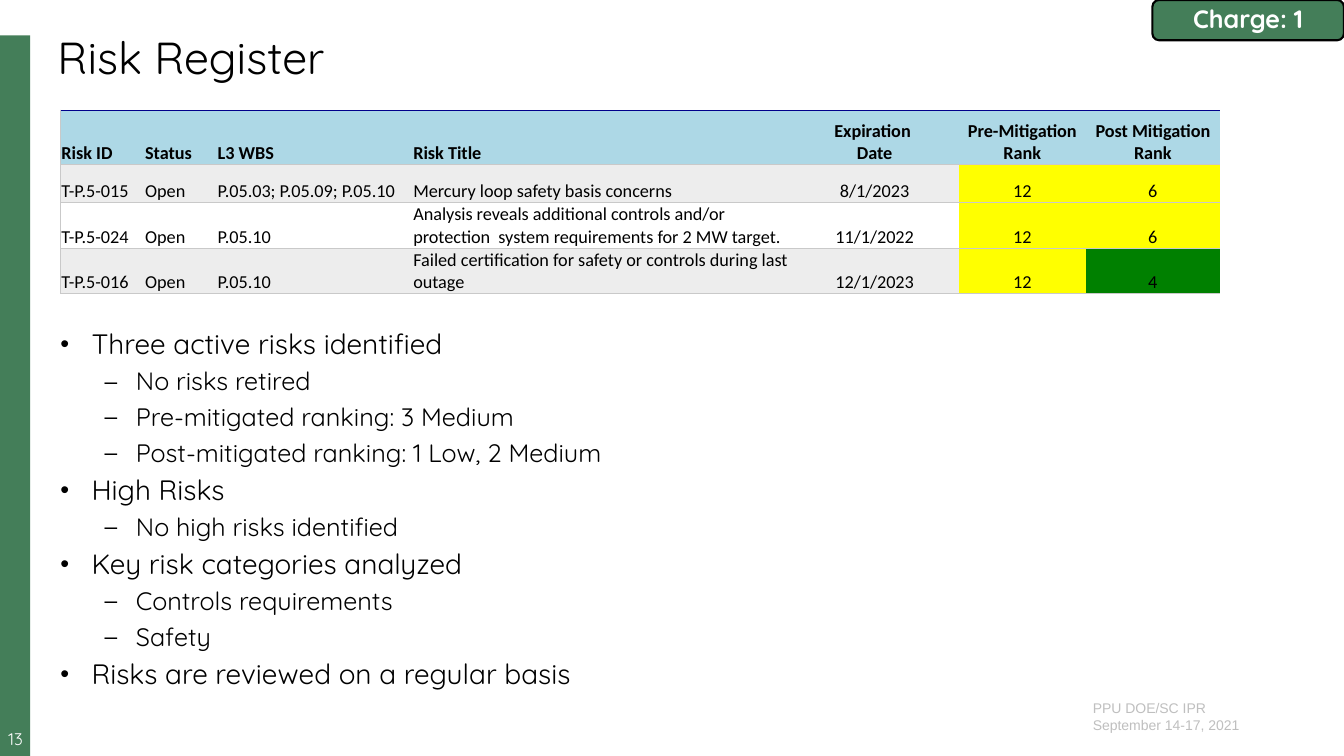
from lxml import etree
from pptx import Presentation
from pptx.dml.color import RGBColor
from pptx.enum.shapes import MSO_SHAPE
from pptx.enum.text import MSO_ANCHOR, PP_ALIGN
from pptx.oxml.ns import qn
from pptx.util import Inches, Pt

LEFT, CENTER = PP_ALIGN.LEFT, PP_ALIGN.CENTER
TOP, MIDDLE, BOTTOM = MSO_ANCHOR.TOP, MSO_ANCHOR.MIDDLE, MSO_ANCHOR.BOTTOM
RECT, ROUND = MSO_SHAPE.RECTANGLE, MSO_SHAPE.ROUNDED_RECTANGLE


def color(code):
    return RGBColor.from_string(code)


def add(parent, tag, **attrs):
    return etree.SubElement(parent, qn(tag), **attrs)


class Deck:
    font, table_font = "Quicksand", "Calibri"
    green, black, white = "447E59", "000000", "FFFFFF"
    gray, rule, navy = "BFBFBF", "C9C9C9", "00008B"
    head, band = "ADD8E6", "EDEDED"

    def __init__(self):
        self.prs = Presentation()
        self.prs.slide_width = Inches(13.33)
        self.prs.slide_height = Inches(7.5)
        self.slide = self.prs.slides.add_slide(self.prs.slide_layouts[5])

    def frame(self, tf, anchor=TOP, inset=(0.1, 0.05, 0.1, 0.05)):
        tf.word_wrap = True
        tf.vertical_anchor = anchor
        tf.margin_left, tf.margin_top, tf.margin_right, tf.margin_bottom = (
            Inches(n) for n in inset)

    def style(self, para, size, ink, align=LEFT, font=None, bold=False, gap=0.9):
        para.alignment = align
        para.line_spacing = gap
        for run in para.runs:
            run.font.name = font or self.font
            run.font.size = Pt(size)
            run.font.bold = bold
            run.font.color.rgb = color(ink)

    def place(self, shape, box):
        shape.left, shape.top, shape.width, shape.height = (Inches(n) for n in box)

    def title(self, text, box):
        shape = self.slide.shapes.title
        self.place(shape, box)
        shape.text_frame.text = text
        self.frame(shape.text_frame)
        self.style(shape.text_frame.paragraphs[0], 32, self.black)

    def shape(self, kind, box, edge=None):
        shape = self.slide.shapes.add_shape(kind, *(Inches(n) for n in box))
        shape.shadow.inherit = False
        shape.fill.solid()
        shape.fill.fore_color.rgb = color(self.green)
        if edge:
            shape.line.color.rgb = color(edge)
            shape.line.width = Pt(1.5)
        else:
            shape.line.fill.background()
        return shape

    def badge(self, text, box):
        tf = self.shape(ROUND, box, self.black).text_frame
        tf.text = text
        self.frame(tf, MIDDLE, (0.05,) * 4)
        self.style(tf.paragraphs[0], 18, self.white, CENTER, bold=True)

    def text(self, text, box, size, ink, inset=(0.1, 0.05, 0.1, 0.05), **look):
        tf = self.slide.shapes.add_textbox(*(Inches(n) for n in box)).text_frame
        tf.text = text
        self.frame(tf, TOP, inset)
        for para in tf.paragraphs:
            self.style(para, size, ink, **look)
        return tf

    def bullets(self, items, box):
        tf = self.text("\n".join(text for _, text in items), box, 20, self.black)
        for i, (para, (level, _)) in enumerate(zip(tf.paragraphs, items)):
            para.level = level
            para.space_before = Pt(6 if i else 0)
            props = para._p.get_or_add_pPr()
            props.set("marL", str(Inches((0.31, 0.75)[level])))
            props.set("indent", str(Inches(-0.31)))
            add(add(props, "a:buClr"), "a:srgbClr", val=self.black)
            add(props, "a:buSzPct", val="90000")
            add(props, "a:buFont", typeface="Arial")
            add(props, "a:buChar", char="•–"[level])
            para.font.size = Pt((20, 18)[level])
            for run in para.runs:
                run.font.size = para.font.size

    def border(self, cell, side, ink):
        line = add(cell._tc.get_or_add_tcPr(), "a:ln" + side, w=str(Pt(0.5)))
        if ink:
            add(add(line, "a:solidFill"), "a:srgbClr", val=ink)
        else:
            add(line, "a:noFill")

    def cell(self, cell, text, fill, edges, align, bold):
        for side, ink in zip("LRTB", edges):
            self.border(cell, side, ink)
        if fill:
            cell.fill.solid()
            cell.fill.fore_color.rgb = color(fill)
        else:
            cell.fill.background()
        para = cell.text_frame.paragraphs[0]
        para.text = text
        cell.vertical_anchor = BOTTOM
        cell.margin_left = cell.margin_right = cell.margin_top = Inches(0.01)
        cell.margin_bottom = 0
        self.style(para, 13, self.black, align, self.table_font, bold, 1.0)

    def table(self, rows, ranks, spot, widths, heights):
        box = (*spot, sum(widths), sum(heights))
        grid = self.slide.shapes.add_table(
            len(rows), len(widths), *(Inches(n) for n in box)).table
        grid.horz_banding = False
        for col, width in zip(grid.columns, widths):
            col.width = Inches(width)
        for row, height in zip(grid.rows, heights):
            row.height = Inches(height)
        for r, row in enumerate(rows):
            base = self.band if r % 2 else None
            for c, text in enumerate(row):
                fill = self.head if r == 0 else ranks[text] if c > 4 else base
                edges = (None if c else self.rule, None,
                         self.rule if r else self.navy, self.rule)
                align = CENTER if c > 3 else LEFT
                self.cell(grid.cell(r, c), text, fill, edges, align, r == 0)


RISKS = [
    ("Risk ID", "Status", "L3 WBS", "Risk Title", "Expiration \vDate",
     "Pre-Mitigation Rank", "Post Mitigation Rank"),
    ("T-P.5-015", "Open", "P.05.03; P.05.09; P.05.10",
     "Mercury loop safety basis concerns", "8/1/2023", "12", "6"),
    ("T-P.5-024", "Open", "P.05.10",
     "Analysis reveals additional controls and/or protection  system "
     "requirements for 2 MW target.", "11/1/2022", "12", "6"),
    ("T-P.5-016", "Open", "P.05.10",
     "Failed certification for safety or controls during last outage",
     "12/1/2023", "12", "4"),
]
RANKS = {"12": "FFFF00", "6": "FFFF00", "4": "008000"}
POINTS = [
    (0, "Three active risks identified"),
    (1, "No risks retired"),
    (1, "Pre-mitigated ranking: 3 Medium"),
    (1, "Post-mitigated ranking: 1 Low, 2 Medium"),
    (0, "High Risks"),
    (1, "No high risks identified"),
    (0, "Key risk categories analyzed"),
    (1, "Controls requirements"),
    (1, "Safety"),
    (0, "Risks are reviewed on a regular basis"),
]


def main():
    deck = Deck()
    # Side bar, page number and footer
    deck.shape(RECT, (0, 0.35, 0.3, 7.15))
    deck.text("13", (0, 7.25, 0.31, 0.17), 12, deck.white, (0,) * 4, align=CENTER)
    deck.text("PPU DOE/SC IPR\nSeptember 14-17, 2021", (10.74, 6.89, 2.23, 0.44),
              10, deck.gray, font="Arial", gap=1.0)
    # Title and badge
    deck.title("Risk Register", (0.47, 0.3, 12.5, 0.59))
    deck.badge("Charge: 1", (11.43, 0, 1.9, 0.4))
    # Risk list and table
    deck.bullets(POINTS, (0.5, 3.23, 12.5, 3.73))
    deck.table(RISKS, RANKS, (0.6, 1.09),
               (0.83, 0.72, 1.94, 3.75, 1.67, 1.26, 1.33),
               (0.54, 0.38, 0.45, 0.45))
    deck.prs.save("out.pptx")


if __name__ == "__main__":
    main()
